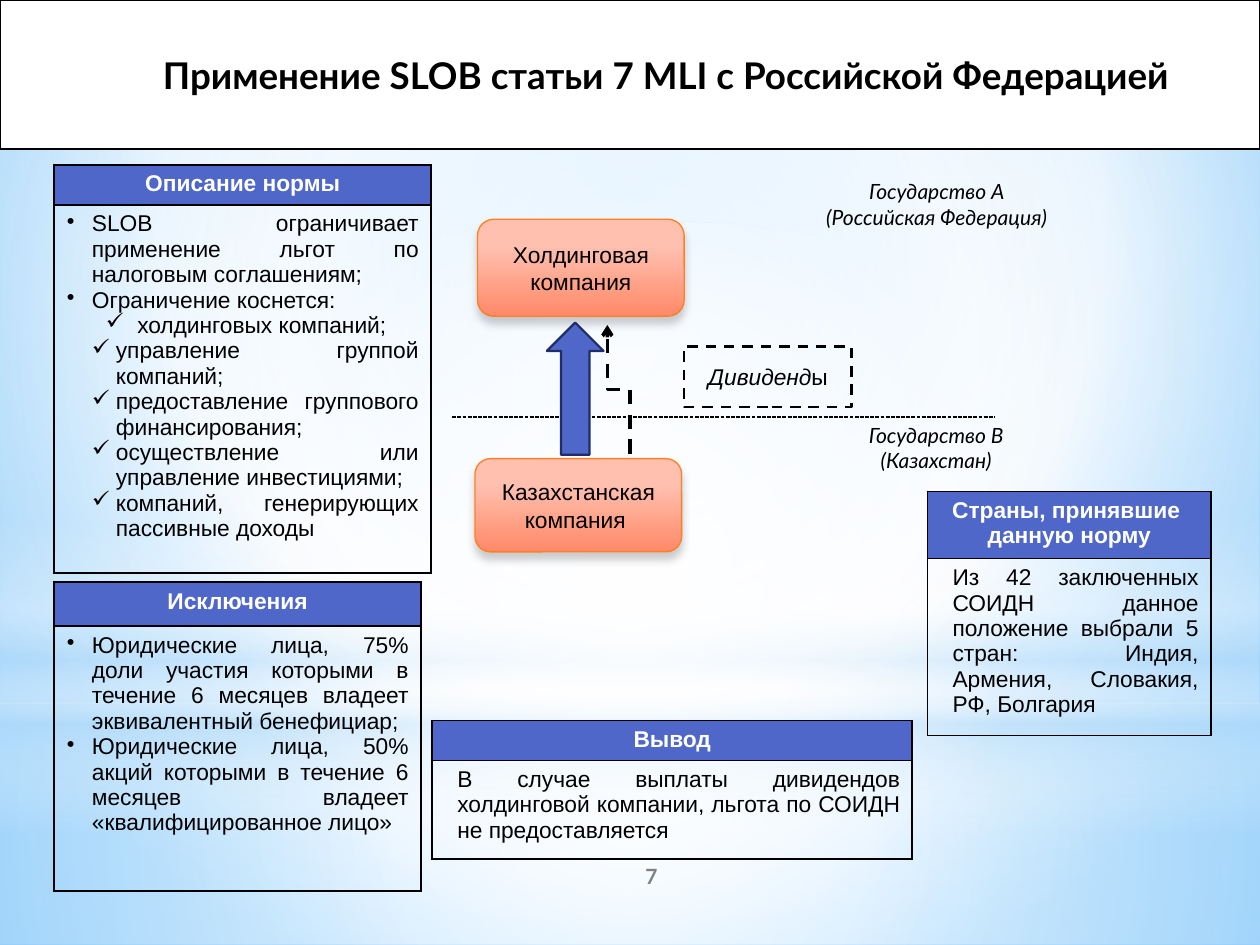
from lxml.etree import Element, SubElement
from pptx import Presentation
from pptx.dml.color import RGBColor
from pptx.enum.dml import MSO_LINE_DASH_STYLE as Dash
from pptx.enum.shapes import MSO_CONNECTOR as Connector, MSO_SHAPE as Shape
from pptx.enum.text import MSO_ANCHOR as Anchor, PP_ALIGN as Align
from pptx.oxml.ns import qn
from pptx.util import Inches, Pt

BLACK = RGBColor(0x00, 0x00, 0x00)
WHITE = RGBColor(0xFF, 0xFF, 0xFF)
GRAY = RGBColor(0x80, 0x80, 0x80)
BLUE = RGBColor(0x4E, 0x67, 0xC8)
NAVY = RGBColor(0x1F, 0x2E, 0x69)
ORANGE = RGBColor(0xFF, 0x80, 0x21)
PEACH = RGBColor(0xFF, 0xC0, 0xAF)
CORAL = RGBColor(0xFF, 0x89, 0x68)
PALE_BLUE = RGBColor(0xB4, 0xDC, 0xFA)
SKY = RGBColor(0x9E, 0xD5, 0xFF)
DEEP_SKY = RGBColor(0x5B, 0xB9, 0xFF)

CENTER = (50, 50, 50, 50)
# Paragraph indents: left margin, first line
BULLET = ("•", 0.2, -0.2)
CHECK = ("✓", 0.39, -0.19)
CHECK_WIDE = ("✓", 0.56, -0.25)
PLAIN = (None, 0.1, 0)


def add_color(parent, color, opacity=100):
    node = SubElement(parent, qn("a:srgbClr"), val=str(color))
    if opacity < 100:
        SubElement(node, qn("a:alpha"), val=str(opacity * 1000))


def set_gradient(fill_parent, fill, stops, focus=None):
    """Stops are (position, colour, opacity); without a focus the fill runs downwards."""
    fill.solid()
    gradient = Element(qn("a:gradFill"), rotWithShape="1")
    stop_list = SubElement(gradient, qn("a:gsLst"))
    for position, color, opacity in stops:
        add_color(SubElement(stop_list, qn("a:gs"), pos=str(position * 1000)), color, opacity)
    if focus:
        path = SubElement(gradient, qn("a:path"), {"path": "circle"})
        sides = {side: str(value * 1000) for side, value in zip("ltrb", focus)}
        SubElement(path, qn("a:fillToRect"), sides)
    else:
        SubElement(gradient, qn("a:lin"), ang="5400000", scaled="0")
    fill_parent.replace(fill_parent.find(qn("a:solidFill")), gradient)


def set_line(line, color, width, dash=None):
    line.color.rgb = color
    line.width = Pt(width)
    if dash:
        line.dash_style = dash


def format_runs(paragraph, size, font, color=BLACK, bold=False, italic=False):
    for run in paragraph.runs:
        run.font.size, run.font.name = Pt(size), font
        run.font.bold, run.font.italic = bold, italic
        run.font.color.rgb = color


def write(shape, text, size, font, **style):
    frame = shape.text_frame
    frame.word_wrap = True
    frame.vertical_anchor = Anchor.MIDDLE
    frame.margin_top = frame.margin_bottom = Inches(0.04)
    frame.text = text
    for paragraph in frame.paragraphs:
        paragraph.alignment = Align.CENTER
        format_runs(paragraph, size, font, **style)


def add_shape(slide, kind, *box):
    shape = slide.shapes.add_shape(kind, *map(Inches, box))
    shape.shadow.inherit = False
    return shape


def add_label(slide, box, text, **style):
    label = slide.shapes.add_textbox(*map(Inches, box))
    write(label, text, 12, "Lato", **style)


def add_backdrop(slide, kind, box, stops, focus=None):
    shape = add_shape(slide, kind, *box)
    shape.line.fill.background()
    set_gradient(shape._element.spPr, shape.fill, stops, focus)


def add_company(slide, box, text):
    shape = add_shape(slide, Shape.ROUNDED_RECTANGLE, *box)
    set_gradient(shape._element.spPr, shape.fill, [(28, PEACH, 100), (100, CORAL, 100)])
    set_line(shape.line, ORANGE, 0.75)
    effects = shape._element.spPr.find(qn("a:effectLst"))
    shadow = SubElement(effects, qn("a:outerShdw"), blurRad=str(Pt(5)), dist=str(Pt(4)),
                        dir="5400000", rotWithShape="0")
    add_color(shadow, BLACK, 20)
    write(shape, text, 13, "Arial")


def add_connector(slide, kind, ends, width, dash):
    connector = slide.shapes.add_connector(kind, *map(Inches, ends))
    set_line(connector.line, BLACK, width, dash)
    SubElement(connector._element.spPr, qn("a:effectLst"))
    return connector


def set_borders(cell):
    properties = cell._tc.get_or_add_tcPr()
    for index, side in enumerate(("a:lnL", "a:lnR", "a:lnT", "a:lnB")):
        border = Element(qn(side), w=str(Pt(1)))
        add_color(SubElement(border, qn("a:solidFill")), BLACK)
        properties.insert(index, border)


def indent(paragraph, bullet, left, first):
    properties = paragraph._p.get_or_add_pPr()
    properties.set("marL", str(Inches(left)))
    properties.set("indent", str(Inches(first)))
    if bullet:
        SubElement(properties, qn("a:buChar"), char=bullet)


def add_panel(slide, left, top, width, row_heights, header, items):
    """A two-row table: blue heading above justified (text, indent) items."""
    table = slide.shapes.add_table(2, 1, Inches(left), Inches(top), Inches(width),
                                   Inches(sum(row_heights))).table
    table.horz_banding = table.first_row = False
    for row, height in zip(table.rows, row_heights):
        row.height = Inches(height)
    heading, body = table.cell(0, 0), table.cell(1, 0)
    heading.fill.solid()
    heading.fill.fore_color.rgb = BLUE
    body.fill.background()
    heading.text_frame.text = header
    body.text_frame.text = "\n".join(text for text, _ in items)
    for paragraph in heading.text_frame.paragraphs:
        paragraph.alignment = Align.CENTER
        format_runs(paragraph, 13, "Arial", WHITE, bold=True)
    for paragraph, (_, style) in zip(body.text_frame.paragraphs, items):
        paragraph.alignment = Align.JUSTIFY
        indent(paragraph, *style)
        format_runs(paragraph, 13, "Arial")
    for cell in (heading, body):
        set_borders(cell)


def add_background(slide):
    fill = slide.background.fill
    fill.solid()
    set_gradient(slide._element.cSld.find(qn("p:bg")).find(qn("p:bgPr")), fill,
                 [(0, SKY, 100), (60, WHITE, 100), (100, DEEP_SKY, 100)], (20, 10, 20, 60))
    add_backdrop(slide, Shape.RECTANGLE, (0, 5.58, 10, 1.92),
                 [(0, WHITE, 91), (37, WHITE, 76), (100, PALE_BLUE, 79)], CENTER)
    add_backdrop(slide, Shape.RECTANGLE, (0, 0, 10, 5.58),
                 [(0, WHITE, 89), (48, WHITE, 62), (100, PALE_BLUE, 79)], CENTER)
    add_backdrop(slide, Shape.RECTANGLE, (0, 4.12, 10, 2.5),
                 [(0, WHITE, 0), (29, WHITE, 30), (45, PALE_BLUE, 40),
                  (55, WHITE, 26), (65, PALE_BLUE, 60), (100, WHITE, 0)])
    add_backdrop(slide, Shape.OVAL, (0, 1.75, 10, 5.58),
                 [(0, WHITE, 100), (56, WHITE, 0)], CENTER)


def add_title(slide, text):
    title = slide.shapes.title
    title.left, title.top, title.width, title.height = map(Inches, (0, 0, 10, 1.18))
    title.fill.solid()
    title.fill.fore_color.rgb = WHITE
    set_line(title.line, BLACK, 1.25)
    write(title, text, 21, "Lato", bold=True)
    title.text_frame.margin_left = Inches(0.67)
    # Bring the title in front of the backdrops
    slide.shapes._spTree.append(title._element)


def add_scheme(slide):
    add_company(slide, (3.79, 1.74, 1.64, 0.77), "Холдинговая компания")
    add_company(slide, (3.77, 3.64, 1.64, 0.74), "Казахстанская компания ")
    add_label(slide, (6.36, 1.37, 2.15, 0.5), "Государство А\n(Российская Федерация)", italic=True)
    add_label(slide, (6.67, 3.35, 1.52, 0.41), "Государство В\n(Казахстан)", italic=True)

    # Dividend box: the last letter is upright
    dividends = add_shape(slide, Shape.RECTANGLE, 5.43, 2.75, 1.33, 0.48)
    dividends.fill.background()
    set_line(dividends.line, BLACK, 1.5, Dash.DASH)
    write(dividends, "Дивиденд", 13, "Arial", italic=True)
    paragraph = dividends.text_frame.paragraphs[0]
    paragraph.add_run().text = "ы"
    format_runs(paragraph, 13, "Arial")
    paragraph.runs[0].font.italic = True

    # Border between the states, and the dividend flow
    add_connector(slide, Connector.STRAIGHT, (3.59, 3.31, 7.89, 3.31), 0.75, Dash.SQUARE_DOT)
    flow = add_connector(slide, Connector.ELBOW, (4.4, 3.18, 5.42, 3), 2, Dash.DASH)
    flow._element.spPr.find(qn("a:xfrm")).set("rot", str(270 * 60000))
    SubElement(flow.line._get_or_add_ln(), qn("a:tailEnd"), type="arrow")

    arrow = add_shape(slide, Shape.DOWN_ARROW, 4.34, 2.56, 0.45, 1.05)
    arrow.rotation = 180
    arrow.fill.solid()
    arrow.fill.fore_color.rgb = BLUE
    set_line(arrow.line, NAVY, 1.25)


def add_panels(slide):
    add_panel(slide, 7.36, 3.9, 2.25, (0.51, 1.3), "Страны, принявшие \nданную норму", [
        ("Из 42 заключенных СОИДН данное положение выбрали 5 стран: Индия, Армения, "
         "Словакия, РФ, Болгария", PLAIN)])
    add_panel(slide, 0.43, 1.31, 2.99, (0.3, 2.76), "Описание нормы", [
        ("SLOB ограничивает применение льгот по налоговым соглашениям;", BULLET),
        ("Ограничение коснется: ", BULLET),
        ("холдинговых компаний;", CHECK_WIDE),
        ("управление группой компаний;", CHECK),
        ("предоставление группового финансирования;", CHECK),
        ("осуществление или управление инвестициями;", CHECK),
        ("компаний, генерирующих пассивные доходы", CHECK)])
    add_panel(slide, 3.43, 5.72, 3.81, (0.29, 0.78), "Вывод", [
        ("В случае выплаты дивидендов холдинговой компании, льгота по СОИДН "
         "не предоставляется", PLAIN)])
    add_panel(slide, 0.43, 4.62, 2.91, (0.35, 2.1), "Исключения", [
        ("Юридические лица, 75% доли участия которыми в течение 6 месяцев владеет "
         "эквивалентный бенефициар;", BULLET),
        ("Юридические лица, 50% акций которыми в течение 6 месяцев владеет "
         "«квалифицированное лицо»", BULLET)])


def main():
    presentation = Presentation()
    presentation.slide_width, presentation.slide_height = Inches(10), Inches(7.5)
    slide = presentation.slides.add_slide(presentation.slide_layouts[5])
    add_background(slide)
    add_title(slide, "Применение SLOB статьи 7 MLI с Российской Федерацией")
    add_scheme(slide)
    add_panels(slide)
    add_label(slide, (4.17, 6.75, 2, 0.4), "7", color=GRAY, bold=True)
    presentation.save("out.pptx")


if __name__ == "__main__":
    main()
